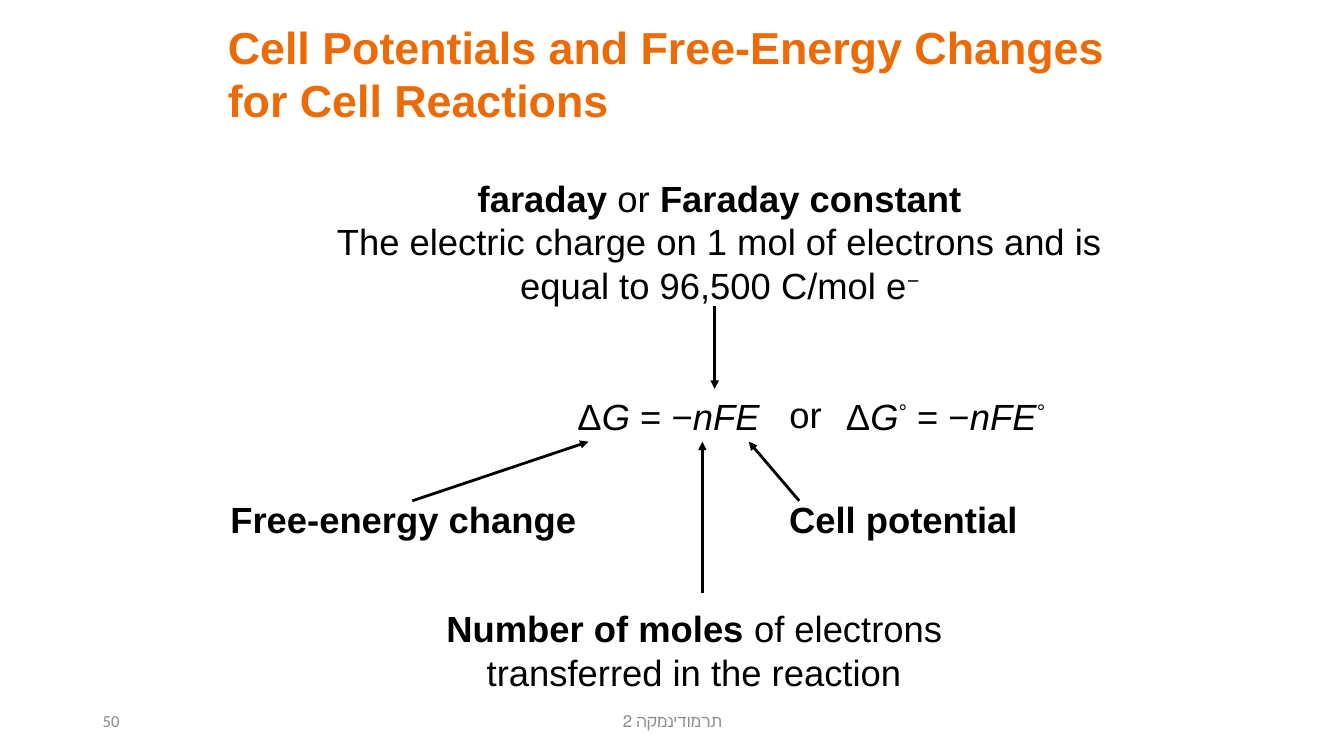
from dataclasses import dataclass

from lxml.etree import SubElement
from pptx import Presentation
from pptx.dml.color import RGBColor
from pptx.enum.shapes import MSO_CONNECTOR
from pptx.enum.text import MSO_ANCHOR as Anchor, MSO_AUTO_SIZE as AutoSize, PP_ALIGN as Align
from pptx.oxml.ns import qn
from pptx.slide import Slide
from pptx.util import Cm, Pt

ORANGE = RGBColor(0xED, 0x6B, 0x06)
BLACK = RGBColor(0x00, 0x00, 0x00)
GRAY = RGBColor(0x8C, 0x8C, 0x8C)


@dataclass(frozen=True)
class Span:
    text: str
    bold: bool = False
    italic: bool = False
    raised: bool = False


@dataclass(frozen=True)
class Style:
    size: float
    color: RGBColor
    font: str = "Arial"


@dataclass(frozen=True)
class Label:
    box: tuple[float, float, float, float]  # left, top, width, height in cm
    paragraphs: list[list[Span]]
    style: Style
    anchor: Anchor = Anchor.MIDDLE
    align: Align = Align.CENTER
    wrap: bool = True
    right_to_left: bool = False


@dataclass(frozen=True)
class Arrow:
    start: tuple[float, float]
    end: tuple[float, float]


TITLE = Style(32, ORANGE)
BODY = Style(26, BLACK)
FOOTER = Style(12, GRAY, "Calibri")

HEADING = Label((4.47, 0.36, 24.43, 3),
                [[Span("Cell Potentials and Free-Energy Changes for Cell Reactions", bold=True)]],
                TITLE, Anchor.TOP, Align.LEFT)

DELTA, MINUS = Span("Δ"), Span(" = −")
G, NFE = Span("G", italic=True), Span("nFE", italic=True)
DEGREE = Span("°", raised=True)

LABELS = [
    # Footer
    Label((11.23, 17.65, 11.43, 1.02), [[Span("תרמודינמקה 2")]], FOOTER, right_to_left=True),
    Label((2.34, 17.65, 7.62, 1.02), [[Span("50")]], FOOTER, align=Align.LEFT),
    # Faraday constant
    Label((7.04, 4.29, 22.2, 3.58), [
        [Span("faraday", bold=True), Span(" or "), Span("Faraday constant", bold=True)],
        [Span("The electric charge on 1 mol of electrons and is equal to 96,500 C/mol e"),
         Span("−", raised=True)],
    ], BODY),
    # Equations
    Label((14.27, 9.8, 5.16, 1.37), [[DELTA, G, MINUS, NFE]], BODY, wrap=False),
    Label((19.63, 9.75, 1.35, 1.37), [[Span("or")]], BODY, wrap=False),
    Label((20.68, 9.8, 6.3, 1.37), [[DELTA, G, DEGREE, MINUS, NFE, DEGREE]], BODY, wrap=False),
    # Meanings of the symbols
    Label((5.51, 12.4, 9.32, 1.37), [[Span("Free-energy change", bold=True)]],
          BODY, Anchor.TOP, wrap=False),
    Label((19.61, 12.4, 6.32, 1.37), [[Span("Cell potential", bold=True)]],
          BODY, Anchor.TOP, wrap=False),
    Label((9.98, 15.16, 15.04, 2.49),
          [[Span("Number of moles", bold=True),
            Span(" of electrons transferred in the reaction")]], BODY, Anchor.TOP),
]

ARROWS = [
    Arrow((18.01, 7.7), (18.01, 9.8)),
    Arrow((10.39, 12.62), (14.83, 11.13)),
    Arrow((17.7, 14.94), (17.7, 11.13)),
    Arrow((20.14, 12.62), (18.87, 11.13)),
]


def fill_text(shape, label: Label) -> None:
    frame = shape.text_frame
    frame.auto_size = AutoSize.NONE
    frame.word_wrap = label.wrap
    frame.vertical_anchor = label.anchor
    for index, spans in enumerate(label.paragraphs):
        paragraph = frame.add_paragraph() if index else frame.paragraphs[0]
        paragraph.alignment = label.align
        if label.right_to_left:
            paragraph._p.get_or_add_pPr().set("rtl", "1")
        for span in spans:
            run = paragraph.add_run()
            run.text = span.text
            font = run.font
            font.name, font.size = label.style.font, Pt(label.style.size)
            font.bold, font.italic = span.bold, span.italic
            font.color.rgb = label.style.color
            if span.raised:
                run._r.get_or_add_rPr().set("baseline", "30000")


def add_title(slide: Slide, label: Label) -> None:
    title = slide.shapes.title
    title.left, title.top, title.width, title.height = map(Cm, label.box)
    fill_text(title, label)
    title.text_frame.margin_left = Cm(1.27)


def add_label(slide: Slide, label: Label) -> None:
    fill_text(slide.shapes.add_textbox(*map(Cm, label.box)), label)


def add_arrow(slide: Slide, arrow: Arrow) -> None:
    connector = slide.shapes.add_connector(
        MSO_CONNECTOR.STRAIGHT, *map(Cm, arrow.start + arrow.end))
    connector.line.color.rgb = BLACK
    connector.line.width = Pt(2)
    SubElement(connector.line._get_or_add_ln(), qn("a:tailEnd"), type="triangle")
    SubElement(connector._element.spPr, qn("a:effectLst"))


def main() -> None:
    presentation = Presentation()
    presentation.slide_width, presentation.slide_height = Cm(33.87), Cm(19.05)
    title_only = presentation.slide_layouts[5]
    slide = presentation.slides.add_slide(title_only)
    add_title(slide, HEADING)
    for label in LABELS:
        add_label(slide, label)
    for arrow in ARROWS:
        add_arrow(slide, arrow)
    presentation.save("out.pptx")


if __name__ == "__main__":
    main()
